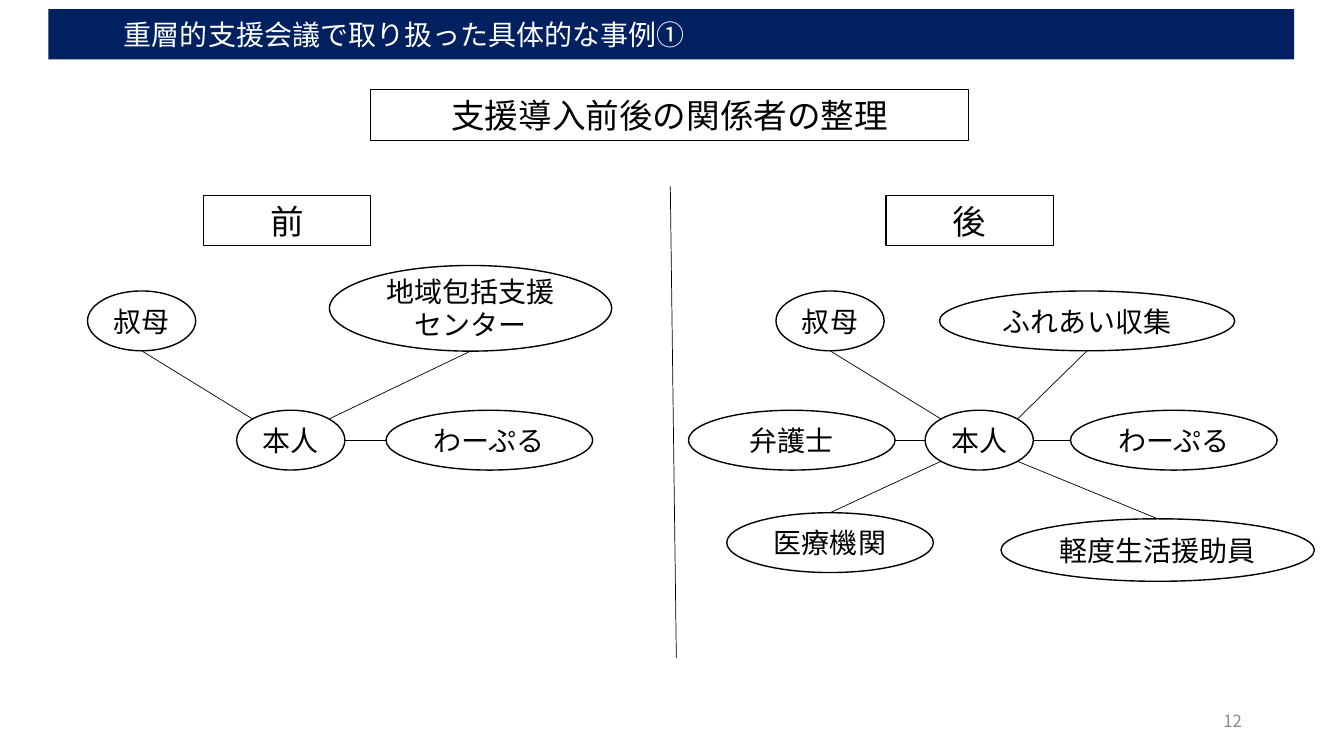
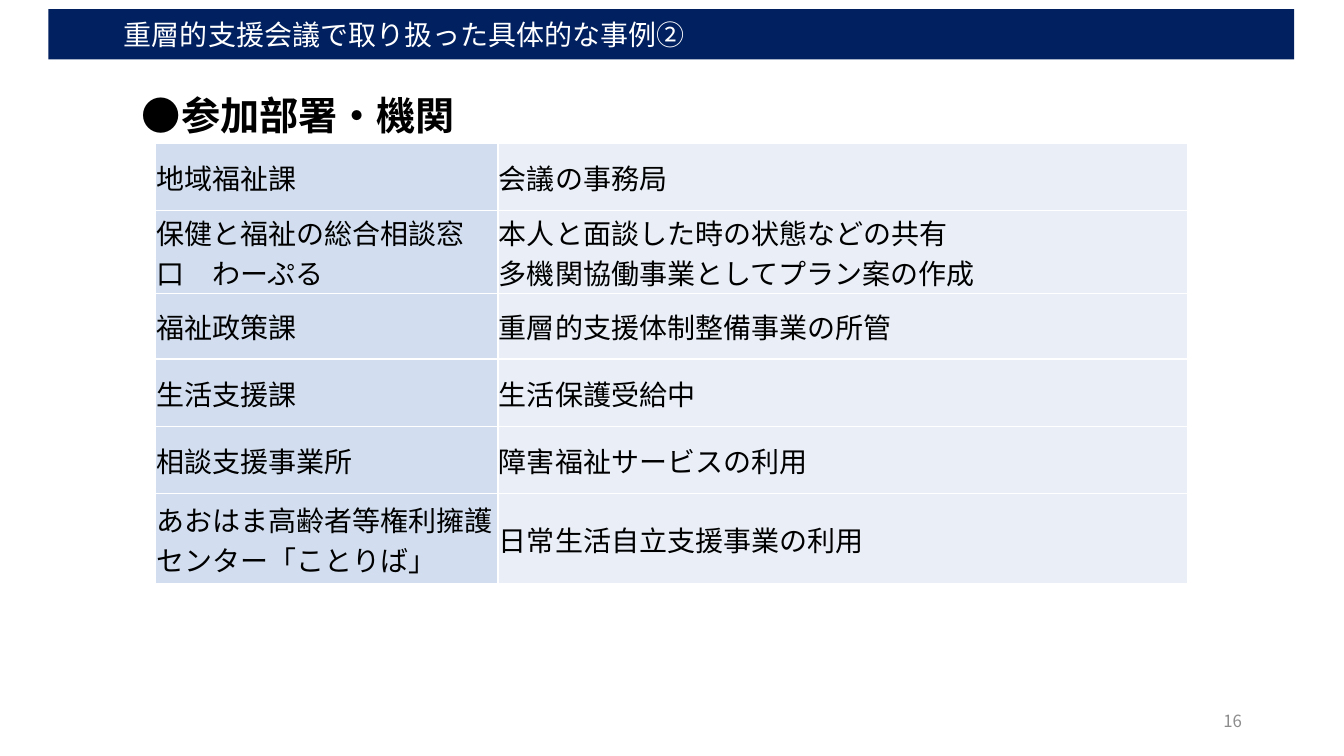
"""Build two case-study slides: a before/after support network and a table of participants."""
from dataclasses import dataclass
from math import copysign, hypot
from typing import Any, NamedTuple

from lxml.etree import SubElement
from pptx import Presentation
from pptx.dml.color import RGBColor
from pptx.enum.shapes import MSO_CONNECTOR as Connector, MSO_SHAPE as Preset
from pptx.enum.text import MSO_ANCHOR as Anchor, PP_ALIGN as Align
from pptx.oxml.ns import qn
from pptx.util import Emu, Inches, Pt

COLUMNS, ROWS = 80, 45
CELL = Inches(1) / 6
FONT = "Noto Sans CJK JP"
COLORS = {
    "ink": "000000",
    "paper": "FFFFFF",
    "band": "002060",
    "number": "8C8C8C",
    "organization": "D2DEEF",
    "role": "EAEFF7",
}


class Box(NamedTuple):
    """A rectangle in grid columns and rows."""

    left: float
    top: float
    width: float
    height: float


class TextStyle(NamedTuple):
    """The look of one piece of text."""

    size: float
    color: str = "ink"
    align: Any = Align.CENTER
    bold: bool = False
    spacing: Any = 1.0


class Border(NamedTuple):
    """The outline of a shape."""

    width: float
    color: str = "ink"


@dataclass(frozen=True)
class Node:
    """An ellipse whose centre is offset from the person at the hub."""

    text: str
    across: float = 0
    down: float = 0
    width: float = 12.3
    height: float = 3.56
    spacing: Any = 1.0


@dataclass(frozen=True)
class Network:
    """A captioned hub with the supporters linked to it."""

    caption: Box
    label: str
    center: float
    supporters: tuple[Node, ...]


BAND = Box(2.88, 0.54, 74.16, 3)
NUMBER = Box(56.52, 41.7, 18, 2.4)
HEADING = Box(22.08, 5.34, 35.58, 3)
SECTION = Box(7.86, 5.1, 64.26, 3.42)
TABLE_COLUMNS = (20.4, 41.04)
TABLE_ROWS = (4, 4.95, 3.9, 4, 4, 5.4)
TABLE = Box(9.24, 8.52, sum(TABLE_COLUMNS), sum(TABLE_ROWS))
HUB_ROW = 26.2
MARGINS = {"margin_left": 0.1, "margin_right": 0.1, "margin_top": 0.05, "margin_bottom": 0.05}
BAND_MARGINS = {"margin_left": 0.75, "margin_right": 0.08, "margin_top": 0.08, "margin_bottom": 0.08}
CELL_MARGINS = {"margin_left": 0.01, "margin_right": 0.01, "margin_top": 0.01, "margin_bottom": 0}

CAPTION = TextStyle(24)
BODY = TextStyle(20, align=Align.LEFT)
SECTION_TITLE = TextStyle(28, align=Align.LEFT, bold=True)
BAND_TITLE = TextStyle(20, "paper", Align.LEFT)
PAGE_NUMBER = TextStyle(12, "number", Align.RIGHT)

PERSON = Node("本人", width=6.44)
AUNT = Node("叔母", -8.88, -7.1, 6.44)
NETWORKS = (
    Network(Box(12.12, 11.64, 9.96, 3), "前", 17.31, (
        AUNT,
        Node("地域包括支援センター", 10.7, -7.85, 16.8, 5.1, Pt(23.6)),
        Node("わーぷる", 11.82),
    )),
    Network(Box(52.74, 11.64, 9.96, 3), "後", 58.29, (
        AUNT,
        Node("ふれあい収集", 6.42, -7.1, 17.58),
        Node("弁護士", -11.16),
        Node("わーぷる", 11.58),
        Node("医療機関", -8.88, 6.1),
        Node("軽度生活援助員", 10.62, 6.54, 18.66, 3.72),
    )),
)
PARTICIPANTS = (
    ("地域福祉課", "会議の事務局"),
    ("保健と福祉の総合相談窓口　わーぷる", "本人と面談した時の状態などの共有\n多機関協働事業としてプラン案の作成"),
    ("福祉政策課", "重層的支援体制整備事業の所管"),
    ("生活支援課", "生活保護受給中"),
    ("相談支援事業所", "障害福祉サービスの利用"),
    ("あおはま高齢者等権利擁護センター「ことりば」", "日常生活自立支援事業の利用"),
)


def grid(*counts: float) -> list[Emu]:
    """Turn grid counts into lengths."""
    return [Emu(round(count * CELL)) for count in counts]


def rgb(name: str) -> RGBColor:
    """Look up a named colour."""
    return RGBColor.from_string(COLORS[name])


def apply(target: Any, formats: dict[str, Any]) -> None:
    """Set every attribute of a format dict."""
    for name, value in formats.items():
        setattr(target, name, value)


def write(frame: Any, text: str, style: TextStyle) -> None:
    """Fill a text frame with one paragraph per line."""
    frame.word_wrap = True
    for index, line in enumerate(text.split("\n")):
        para = frame.add_paragraph() if index else frame.paragraphs[0]
        apply(para, {"alignment": style.align, "line_spacing": style.spacing})
        span = para.add_run()
        span.text = line
        apply(span.font, {"size": Pt(style.size), "name": FONT, "bold": style.bold})
        span.font.color.rgb = rgb(style.color)
        SubElement(span._r.get_or_add_rPr(), qn("a:ea"), typeface=FONT)


def set_margins(target: Any, margins: dict[str, float]) -> None:
    """Set text margins given in inches."""
    apply(target, {side: Inches(value) for side, value in margins.items()})


def add_label(page: Any, box: Box, text: str, style: TextStyle) -> None:
    """Add plain text without a frame."""
    frame = page.shapes.add_textbox(*grid(*box)).text_frame
    frame.vertical_anchor = Anchor.MIDDLE
    set_margins(frame, MARGINS)
    write(frame, text, style)


def add_box(page: Any, preset: Any, box: Box, text: str, style: TextStyle, fill: str | None = None,
            border: Border | None = None, margins: dict[str, float] = MARGINS) -> None:
    """Add a preset shape with text."""
    shape = page.shapes.add_shape(preset, *grid(*box))
    shape.shadow.inherit = False
    if fill:
        shape.fill.solid()
        shape.fill.fore_color.rgb = rgb(fill)
    else:
        shape.fill.background()
    if border:
        shape.line.color.rgb = rgb(border.color)
        shape.line.width = Pt(border.width)
    else:
        shape.line.fill.background()
    shape.text_frame.vertical_anchor = Anchor.MIDDLE
    set_margins(shape.text_frame, margins)
    write(shape.text_frame, text, style)


def add_line(page: Any, *ends: float) -> None:
    """Add a thin line between two grid points."""
    line = page.shapes.add_connector(Connector.STRAIGHT, *grid(*ends))
    line.line.color.rgb = rgb("ink")
    line.line.width = Pt(0.5)
    SubElement(line._element.spPr, qn("a:effectLst"))


def add_node(page: Any, node: Node, center: float) -> None:
    """Add one ellipse around its centre."""
    box = Box(center + node.across - node.width / 2, HUB_ROW + node.down - node.height / 2,
              node.width, node.height)
    add_box(page, Preset.OVAL, box, node.text, TextStyle(20, spacing=node.spacing), "paper", Border(1))


def add_link(page: Any, node: Node, center: float) -> None:
    """Link the hub's facing side or diagonal to the supporter's facing side."""
    across = copysign(1, node.across)
    down = copysign(1, node.down) if node.down else 0
    reach = hypot(across, down) * 2
    facing = 0 if down else across
    add_line(
        page,
        center + across * PERSON.width / reach,
        HUB_ROW + down * PERSON.height / reach,
        center + node.across - facing * node.width / 2,
        HUB_ROW + node.down - down * node.height / 2,
    )


def add_network(page: Any, network: Network) -> None:
    """Draw a caption, the hub and its linked supporters."""
    add_box(page, Preset.RECTANGLE, network.caption, network.label, CAPTION, border=Border(0.75))
    for node in (PERSON, *network.supporters):
        add_node(page, node, network.center)
    for node in network.supporters:
        add_link(page, node, network.center)


def add_table(page: Any) -> None:
    """Draw the table of participants and their roles."""
    table = page.shapes.add_table(len(TABLE_ROWS), len(TABLE_COLUMNS), *grid(*TABLE)).table
    apply(table, {"first_row": False, "horz_banding": False})
    for column, width in zip(table.columns, grid(*TABLE_COLUMNS)):
        column.width = width
    for row, height, texts in zip(table.rows, grid(*TABLE_ROWS), PARTICIPANTS):
        row.height = height
        for cell, text, fill in zip(row.cells, texts, ("organization", "role")):
            cell.vertical_anchor = Anchor.MIDDLE
            set_margins(cell, CELL_MARGINS)
            write(cell.text_frame, text, BODY)
            add_borders(cell)
            cell.fill.solid()
            cell.fill.fore_color.rgb = rgb(fill)


def add_borders(cell: Any) -> None:
    """Give a cell thin white edges."""
    for edge in ("a:lnL", "a:lnR", "a:lnT", "a:lnB"):
        line = SubElement(cell._tc.get_or_add_tcPr(), qn(edge), w=str(Pt(1)))
        SubElement(SubElement(line, qn("a:solidFill")), qn("a:srgbClr"), val=COLORS["paper"])


def add_page(deck: Any, title: str, number: str) -> Any:
    """Add a blank page with the title band and page number."""
    page = deck.slides.add_slide(deck.slide_layouts[6])
    add_box(page, Preset.RECTANGLE, BAND, title, BAND_TITLE, "band", margins=BAND_MARGINS)
    add_label(page, NUMBER, number, PAGE_NUMBER)
    return page


def main() -> None:
    """Build and save the deck."""
    deck = Presentation()
    deck.slide_width, deck.slide_height = grid(COLUMNS, ROWS)

    page = add_page(deck, "重層的支援会議で取り扱った具体的な事例①", "12")
    add_box(page, Preset.RECTANGLE, HEADING, "支援導入前後の関係者の整理", CAPTION, border=Border(0.75))
    add_line(page, 39.9, 11.1, 40.26, 39.18)
    for network in NETWORKS:
        add_network(page, network)

    page = add_page(deck, "重層的支援会議で取り扱った具体的な事例②", "16")
    add_label(page, SECTION, "●参加部署・機関", SECTION_TITLE)
    add_table(page)

    deck.save("out.pptx")


if __name__ == "__main__":
    main()
